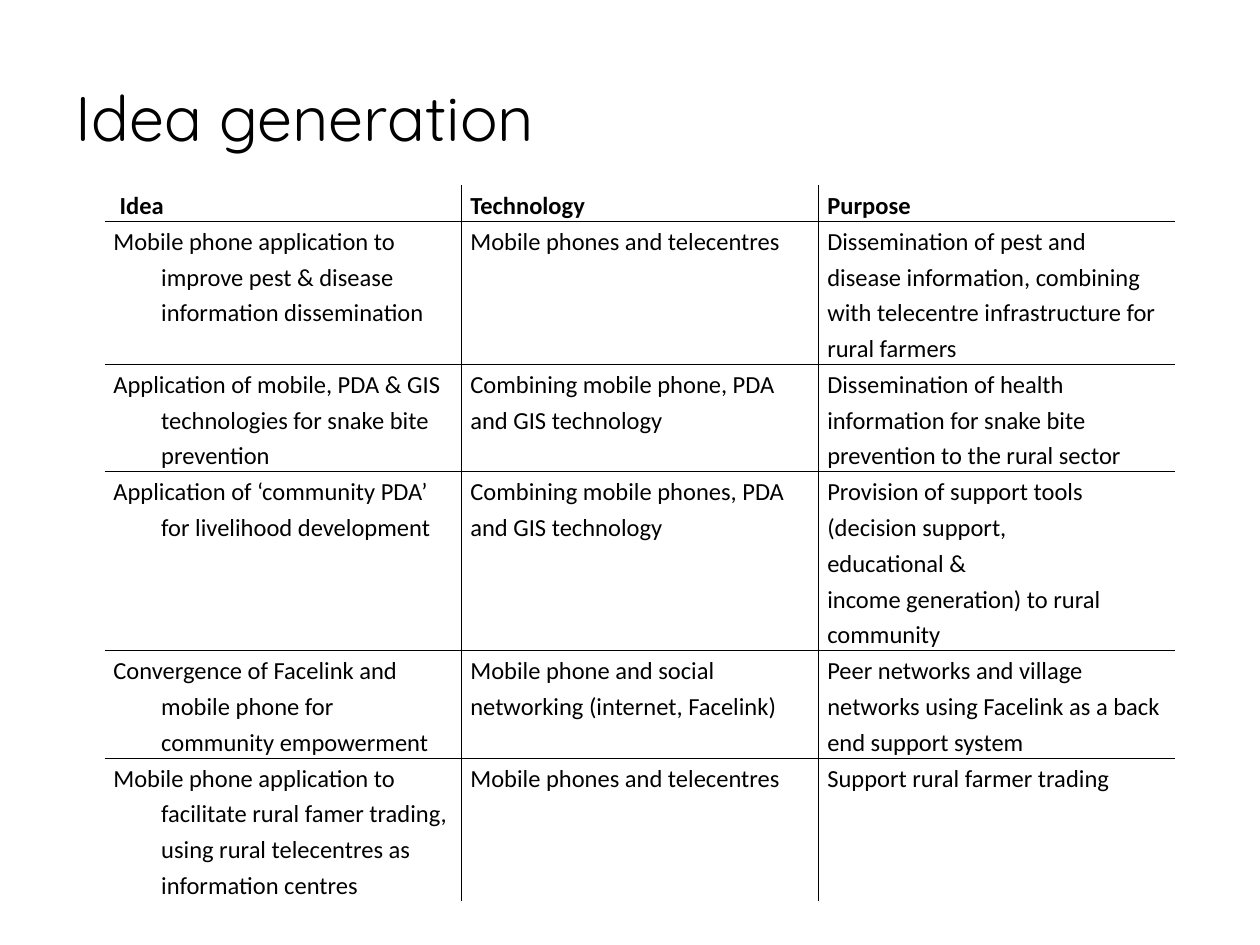
from lxml.etree import SubElement
from pptx import Presentation
from pptx.dml.color import RGBColor
from pptx.enum.text import MSO_ANCHOR, PP_ALIGN
from pptx.oxml.ns import qn
from pptx.util import Inches, Pt

COLORS = {"text": "000000", "border": "000000"}

TITLE = "Idea generation"
HEADERS = ["Idea", "Technology", "Purpose"]
IDEAS = [
    ("Mobile phone application to improve pest & disease information dissemination",
     "Mobile phones and telecentres",
     "Dissemination of pest and disease information, combining with telecentre "
     "infrastructure for rural farmers"),
    ("Application of mobile, PDA & GIS technologies for snake bite prevention",
     "Combining mobile phone, PDA and GIS technology",
     "Dissemination of health information for snake bite prevention to the rural sector"),
    ("Application of ‘community PDA’ for livelihood development",
     "Combining mobile phones, PDA and GIS technology",
     "Provision of support tools (decision support,\neducational &\n"
     "income generation) to rural community"),
    ("Convergence of Facelink and mobile phone for community empowerment",
     "Mobile phone and social networking (internet, Facelink)",
     "Peer networks and village networks using Facelink as a back end support system"),
    ("Mobile phone application to facilitate rural famer trading, using rural "
     "telecentres as information centres",
     "Mobile phones and telecentres",
     "Support rural farmer trading"),
]

# Each row is as tall as its longest cell
LINES_PER_ROW = [1, 4, 3, 5, 3, 4]
LINE_HEIGHT = 0.28
TABLE_LEFT, TABLE_TOP, TABLE_WIDTH = 0.83, 1.47, 8.5


def style_font(font, name, size, color, bold=False):
    font.name, font.size, font.bold = name, Pt(size), bold
    font.color.rgb = RGBColor.from_string(COLORS[color])


def set_borders(cell, visible):
    """Draw the sides marked True in visible and clear the others."""
    properties = cell._tc.get_or_add_tcPr()
    for position, (side, shown) in enumerate(visible.items()):
        line = SubElement(properties, qn(f"a:ln{side}"), w=str(Pt(0.25)))
        properties.insert(position, line)
        if shown:
            fill = SubElement(line, qn("a:solidFill"))
            SubElement(fill, qn("a:srgbClr"), val=COLORS["border"])
        else:
            SubElement(line, qn("a:noFill"))


def set_indent(paragraph, left, first_line):
    properties = paragraph._p.get_or_add_pPr()
    properties.set("marL", str(Inches(left)))
    properties.set("indent", str(Inches(first_line)))


def fill_cell(cell, text, is_header, is_first_column):
    cell.fill.background()
    cell.margin_left, cell.margin_right = Inches(0.07), Inches(0.1)
    cell.margin_top = cell.margin_bottom = 0
    cell.text_frame.text = text
    for paragraph in cell.text_frame.paragraphs:
        if is_first_column:
            set_indent(paragraph, *((0.05, 0) if is_header else (0.38, -0.38)))
        paragraph.line_spacing = 1.2
        for run in paragraph.runs:
            style_font(run.font, "Calibri", 14, "text", bold=is_header)


def add_title(slide):
    title = slide.shapes.title
    title.left, title.top = Inches(0.5), Inches(0.57)
    title.width, title.height = Inches(4.19), Inches(0.71)
    title.text_frame.text = TITLE
    title.text_frame.word_wrap = False
    title.text_frame.vertical_anchor = MSO_ANCHOR.MIDDLE
    paragraph = title.text_frame.paragraphs[0]
    paragraph.alignment = PP_ALIGN.LEFT
    style_font(paragraph.runs[0].font, "Quicksand", 36, "text")


def add_idea_table(slide):
    rows = [HEADERS, *IDEAS]
    last_row, last_column = len(rows) - 1, len(HEADERS) - 1
    table = slide.shapes.add_table(
        len(rows), len(HEADERS), Inches(TABLE_LEFT), Inches(TABLE_TOP),
        Inches(TABLE_WIDTH), Inches(LINE_HEIGHT * sum(LINES_PER_ROW))).table
    table.first_row = table.horz_banding = False
    for row, lines in zip(table.rows, LINES_PER_ROW):
        row.height = Inches(LINE_HEIGHT * lines)
    for r, texts in enumerate(rows):
        for c, text in enumerate(texts):
            cell = table.cell(r, c)
            fill_cell(cell, text, r == 0, c == 0)
            # Only the inner grid lines show
            set_borders(cell, {"L": c > 0, "R": c < last_column,
                               "T": r > 0, "B": r < last_row})


def main():
    presentation = Presentation()
    presentation.slide_width, presentation.slide_height = Inches(10), Inches(7.5)
    slide = presentation.slides.add_slide(presentation.slide_layouts[5])
    add_title(slide)
    add_idea_table(slide)
    presentation.save("out.pptx")


if __name__ == "__main__":
    main()
